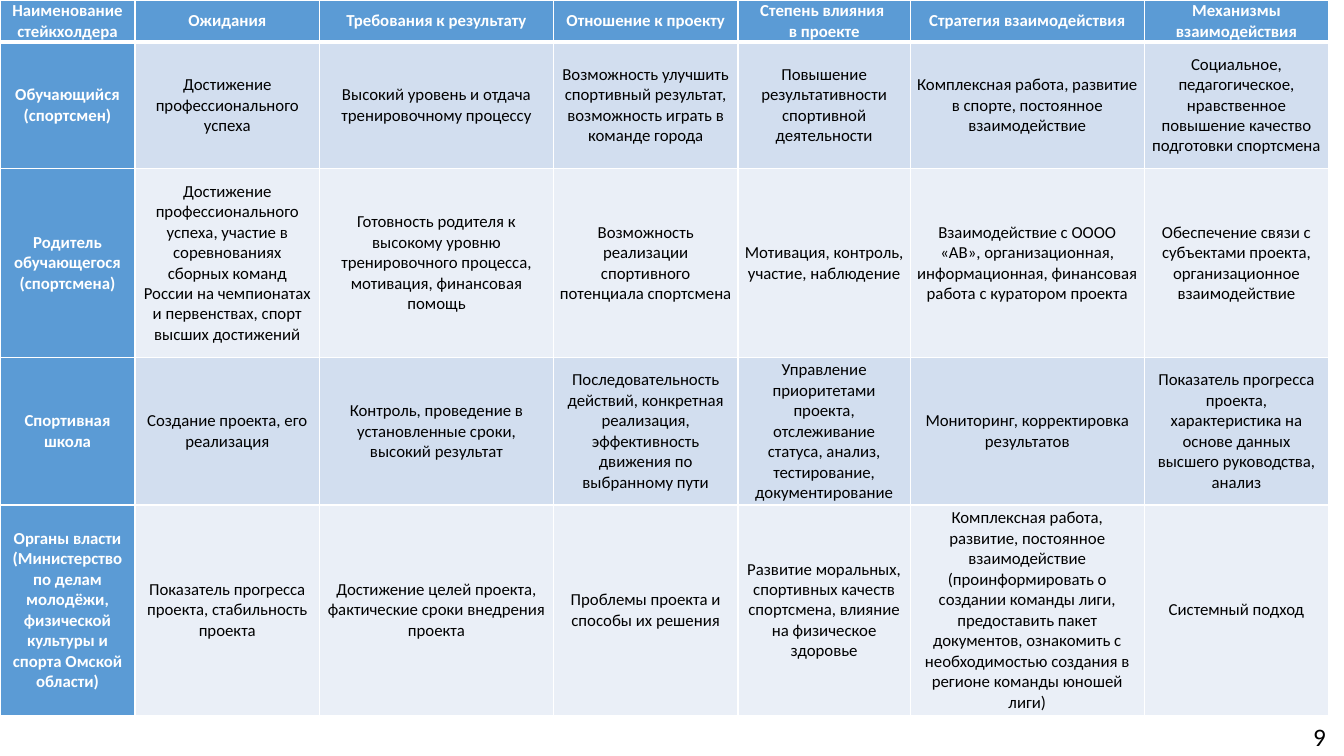
from dataclasses import dataclass
from lxml.etree import SubElement
from pptx import Presentation
from pptx.dml.color import RGBColor
from pptx.enum.text import MSO_ANCHOR, PP_ALIGN
from pptx.oxml.ns import qn
from pptx.util import Pt

PX = 9144


@dataclass(frozen=True)
class Theme:
    face: str = "Calibri"
    head: str = "5B9BD5"
    bands: tuple = ("D2DEEF", "EAEFF7")
    light: str = "FFFFFF"
    dark: str = "000000"
    body: int = 12
    page: int = 18
    thin: int = 1
    thick: int = 3


THEME = Theme()
COLS = (134, 183, 232, 183, 171, 232, 183)
ROWS = (42, 125, 188, 146, 209)
GRID = (
    ("Наименование стейкхолдера", "Ожидания", "Требования к результату",
     "Отношение к проекту", "Степень влияния \nв проекте",
     "Стратегия взаимодействия", "Механизмы взаимодействия"),
    ("Обучающийся (спортсмен)",
     "Достижение профессионального успеха",
     "Высокий уровень и отдача тренировочному процессу",
     "Возможность улучшить спортивный результат, возможность играть в команде города",
     "Повышение результативности спортивной деятельности",
     "Комплексная работа, развитие в спорте, постоянное взаимодействие",
     "Социальное, педагогическое, нравственное повышение качество подготовки спортсмена"),
    ("Родитель обучающегося (спортсмена)",
     "Достижение профессионального успеха, участие в соревнованиях сборных команд "
     "России на чемпионатах и первенствах, спорт высших достижений",
     "Готовность родителя к высокому уровню тренировочного процесса, мотивация, "
     "финансовая помощь",
     "Возможность реализации спортивного потенциала спортсмена",
     "Мотивация, контроль, участие, наблюдение",
     "Взаимодействие с ОООО «АВ», организационная, информационная, финансовая "
     "работа с куратором проекта",
     "Обеспечение связи с субъектами проекта, организационное взаимодействие"),
    ("Спортивная школа",
     "Создание проекта, его реализация",
     "Контроль, проведение в установленные сроки, высокий результат",
     "Последовательность действий, конкретная реализация, эффективность движения "
     "по выбранному пути",
     "Управление приоритетами проекта, отслеживание статуса, анализ, тестирование, "
     "документирование",
     "Мониторинг, корректировка результатов",
     "Показатель прогресса проекта, характеристика на основе данных высшего "
     "руководства, анализ"),
    ("Органы власти (Министерство по делам молодёжи, физической культуры и спорта "
     "Омской области)",
     "Показатель прогресса проекта, стабильность проекта",
     "Достижение целей проекта, фактические сроки внедрения проекта",
     "Проблемы проекта и способы их решения",
     "Развитие моральных, спортивных качеств спортсмена, влияние на физическое здоровье",
     "Комплексная работа, развитие, постоянное взаимодействие (проинформировать о "
     "создании команды лиги, предоставить пакет документов, ознакомить с "
     "необходимостью создания в регионе команды юношей лиги)",
     "Системный подход"),
)


def apply(item, values):
    for name, value in values.items():
        setattr(item, name, value)


def scale(box):
    return [n * PX for n in box]


def write(frame, text, align, size, tint, bold=False):
    para = frame.paragraphs[0]
    para.text = text
    para.alignment = align
    for run in para.runs:
        apply(run.font, {"name": THEME.face, "size": Pt(size), "bold": bold})
        run.font.color.rgb = RGBColor.from_string(tint)


def edge(cell, widths):
    props = cell._tc.get_or_add_tcPr()
    for side, width in widths.items():
        line = SubElement(props, qn(f"a:ln{side}"), w=str(Pt(width)))
        fill = SubElement(line, qn("a:solidFill"))
        SubElement(fill, qn("a:srgbClr"), val=THEME.light)


def matrix(slide, box):
    table = slide.shapes.add_table(len(ROWS), len(COLS), *scale(box)).table
    for col, width in zip(table.columns, COLS):
        col.width = width * PX
    for row, height in zip(table.rows, ROWS):
        row.height = height * PX
    for r, line in enumerate(GRID):
        for c, text in enumerate(line):
            cell = table.cell(r, c)
            title = r == 0 or c == 0
            apply(cell, {"margin_left": 6 * PX, "margin_right": 6 * PX,
                         "margin_top": 0, "margin_bottom": 0,
                         "vertical_anchor": MSO_ANCHOR.MIDDLE})
            edge(cell, {"L": THEME.thin, "R": THEME.thin,
                        "T": THEME.thick if r == 1 else THEME.thin,
                        "B": THEME.thick if r == 0 else THEME.thin})
            cell.fill.solid()
            shade = THEME.head if title else THEME.bands[(r - 1) % 2]
            cell.fill.fore_color.rgb = RGBColor.from_string(shade)
            write(cell.text_frame, text, PP_ALIGN.CENTER, THEME.body,
                  THEME.light if title else THEME.dark, title)


def number(slide, box, text):
    frame = slide.shapes.add_textbox(*scale(box)).text_frame
    apply(frame, {"word_wrap": True, "vertical_anchor": MSO_ANCHOR.MIDDLE})
    write(frame, text, PP_ALIGN.RIGHT, THEME.page, THEME.dark)


def main():
    deck = Presentation()
    apply(deck, {"slide_width": 1333 * PX, "slide_height": 750 * PX})
    slide = deck.slides.add_slide(deck.slide_layouts[6])
    number(slide, (1025, 711, 300, 40), "9")
    matrix(slide, (0, 0, sum(COLS), sum(ROWS)))
    deck.save("out.pptx")


if __name__ == "__main__":
    main()
